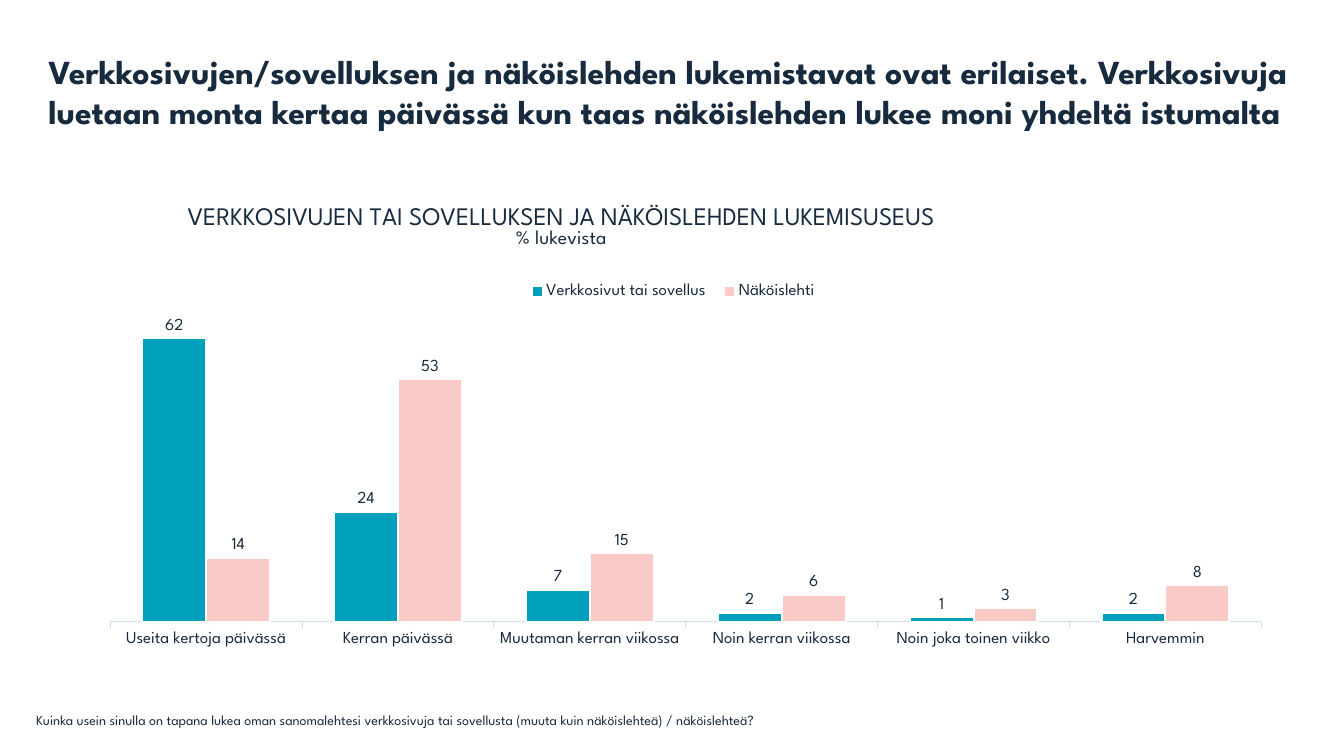
"""Build a slide comparing how often readers use the website or app and the replica paper."""
from dataclasses import dataclass

from lxml.etree import SubElement
from pptx import Presentation
from pptx.chart.data import CategoryChartData
from pptx.dml.color import RGBColor
from pptx.enum.chart import XL_CHART_TYPE as ChartType
from pptx.enum.chart import XL_LABEL_POSITION as LabelPosition
from pptx.enum.chart import XL_LEGEND_POSITION as LegendPosition
from pptx.enum.chart import XL_TICK_LABEL_POSITION as TickLabels
from pptx.enum.chart import XL_TICK_MARK as TickMark
from pptx.oxml.ns import qn
from pptx.util import Inches, Pt

FONT = "League Spartan"
NAVY = RGBColor(0x18, 0x2A, 0x3D)
TEAL = RGBColor(0x00, 0xA0, 0xBD)
PINK = RGBColor(0xF9, 0xCA, 0xC6)
AXIS_GREY = RGBColor(0xD1, 0xDF, 0xED)
WHITE = RGBColor(0xFF, 0xFF, 0xFF)
SLIDE_W, SLIDE_H = Inches(13.33), Inches(7.5)

CATEGORIES = (
    "Useita kertoja päivässä", "Kerran päivässä", "Muutaman kerran viikossa",
    "Noin kerran viikossa", "Noin joka toinen viikko", "Harvemmin",
)


@dataclass(frozen=True)
class Area:
    """A rectangle in shares of the slide's size."""
    left: float
    top: float
    width: float
    height: float

    def emu(self) -> tuple[int, int, int, int]:
        """Return the rectangle in slide units."""
        return (int(self.left * SLIDE_W), int(self.top * SLIDE_H),
                int(self.width * SLIDE_W), int(self.height * SLIDE_H))


@dataclass(frozen=True)
class Caption:
    """A text block on the slide."""
    text: str
    area: Area
    size: int
    bold: bool
    inset: float
    line_spacing: float


@dataclass(frozen=True)
class Channel:
    """A reading channel with its shares of readers."""
    name: str
    shares: tuple[int, ...]
    color: RGBColor


CAPTIONS = (
    Caption("Verkkosivujen/sovelluksen ja näköislehden lukemistavat ovat erilaiset. "
            "Verkkosivuja luetaan monta kertaa päivässä kun taas näköislehden lukee "
            "moni yhdeltä istumalta",
            Area(0.036, 0.067, 0.927, 0.108), 24, True, 0, 1),
    Caption("Kuinka usein sinulla on tapana lukea oman sanomalehtesi verkkosivuja tai "
            "sovellusta (muuta kuin näköislehteä) / näköislehteä?",
            Area(0.0195, 0.933, 0.915, 0.036), 10, False, 0.1, 1.07),
)
CHANNELS = (
    Channel("Verkkosivut tai sovellus", (62, 24, 7, 2, 1, 2), TEAL),
    Channel("Näköislehti", (14, 53, 15, 6, 3, 8), PINK),
)
CHART_AREA = Area(0.036, 0.236, 0.921, 0.652)
HEADING = (("VERKKOSIVUJEN TAI SOVELLUKSEN JA NÄKÖISLEHDEN LUKEMISUSEUS", 18),
           ("% lukevista", 14))


def style(font, size: int, bold: bool = False) -> None:
    """Apply the slide's typeface and text colour."""
    font.name, font.size, font.bold = FONT, Pt(size), bold
    font.color.rgb = NAVY


def add_caption(slide, caption: Caption) -> None:
    """Draw one text block."""
    frame = slide.shapes.add_textbox(*caption.area.emu()).text_frame
    frame.word_wrap = True
    frame.margin_left = frame.margin_right = Inches(caption.inset)
    frame.margin_top = frame.margin_bottom = Inches(caption.inset / 2)
    frame.text = caption.text
    paragraph = frame.paragraphs[0]
    paragraph.line_spacing = caption.line_spacing
    style(paragraph.runs[0].font, caption.size, caption.bold)


def place(element, followed_by: tuple[str, ...], inner: bool = False, **shares: float) -> None:
    """Give a chart part a manual position in shares of the chart."""
    for old in element.findall(qn("c:layout")):
        element.remove(old)
    layout = SubElement(element, qn("c:layout"))
    follower = next((child for child in element if child.tag in map(qn, followed_by)), None)
    if follower is not None:
        follower.addprevious(layout)
    manual = SubElement(layout, qn("c:manualLayout"))
    if inner:
        SubElement(manual, qn("c:layoutTarget")).set("val", "inner")
    for key in "xy":
        SubElement(manual, qn(f"c:{key}Mode")).set("val", "edge")
    for key, share in shares.items():
        SubElement(manual, qn(f"c:{key}")).set("val", str(share))


def add_heading(chart) -> None:
    """Write the two-line chart title."""
    title = chart.chart_title
    frame = title.text_frame
    frame.text = "\n".join(text for text, _ in HEADING)
    for paragraph, (_, size) in zip(frame.paragraphs, HEADING):
        style(paragraph.runs[0].font, size)
    title.include_in_layout = False
    place(title._element, ("c:overlay", "c:spPr", "c:txPr"), x=0.11, y=0.05)


def add_legend(chart) -> None:
    """Show the legend above the columns."""
    chart.has_legend = True
    legend = chart.legend
    legend.position = LegendPosition.TOP
    legend.include_in_layout = False
    style(legend.font, 12)
    place(legend._element, ("c:overlay", "c:spPr", "c:txPr"), x=0.38, y=0.2, w=0.25, h=0.06)


def format_axes(chart) -> None:
    """Keep the category axis and hide the value axis."""
    values, categories = chart.value_axis, chart.category_axis
    values.minimum_scale, values.maximum_scale = 0, 70
    values.has_major_gridlines = False
    values.visible = False
    categories.major_tick_mark = TickMark.OUTSIDE
    categories.tick_label_position = TickLabels.LOW
    categories.format.line.color.rgb = AXIS_GREY
    categories.format.line.width = Pt(0.75)
    style(categories.tick_labels.font, 12)


def format_columns(series, channel: Channel) -> None:
    """Colour and label one channel's columns."""
    series.format.fill.solid()
    series.format.fill.fore_color.rgb = channel.color
    series.format.line.color.rgb = WHITE
    series.format.line.width = Pt(1.5)
    labels = series.data_labels
    labels.show_value = True
    labels.position = LabelPosition.OUTSIDE_END
    style(labels.font, 12)


def add_reading_chart(slide) -> None:
    """Draw the reading frequency chart."""
    frequencies = CategoryChartData(number_format="0")
    frequencies.categories = CATEGORIES
    for channel in CHANNELS:
        frequencies.add_series(channel.name, channel.shares)
    chart = slide.shapes.add_chart(
        ChartType.COLUMN_CLUSTERED, *CHART_AREA.emu(), frequencies).chart
    style(chart.font, 10)
    add_heading(chart)
    add_legend(chart)
    format_axes(chart)
    plot = chart.plots[0]
    plot.gap_width, plot.overlap, plot.vary_by_categories = 100, 0, False
    for series, channel in zip(plot.series, CHANNELS):
        format_columns(series, channel)
    place(plot._element.getparent(), ("c:barChart",), inner=True,
          x=0.05, y=0.25, w=0.93, h=0.65)


def main() -> None:
    """Build and save the slide."""
    deck = Presentation()
    deck.slide_width, deck.slide_height = SLIDE_W, SLIDE_H
    slide = deck.slides.add_slide(deck.slide_layouts[6])
    for caption in CAPTIONS:
        add_caption(slide, caption)
    add_reading_chart(slide)
    deck.save("out.pptx")


if __name__ == "__main__":
    main()
